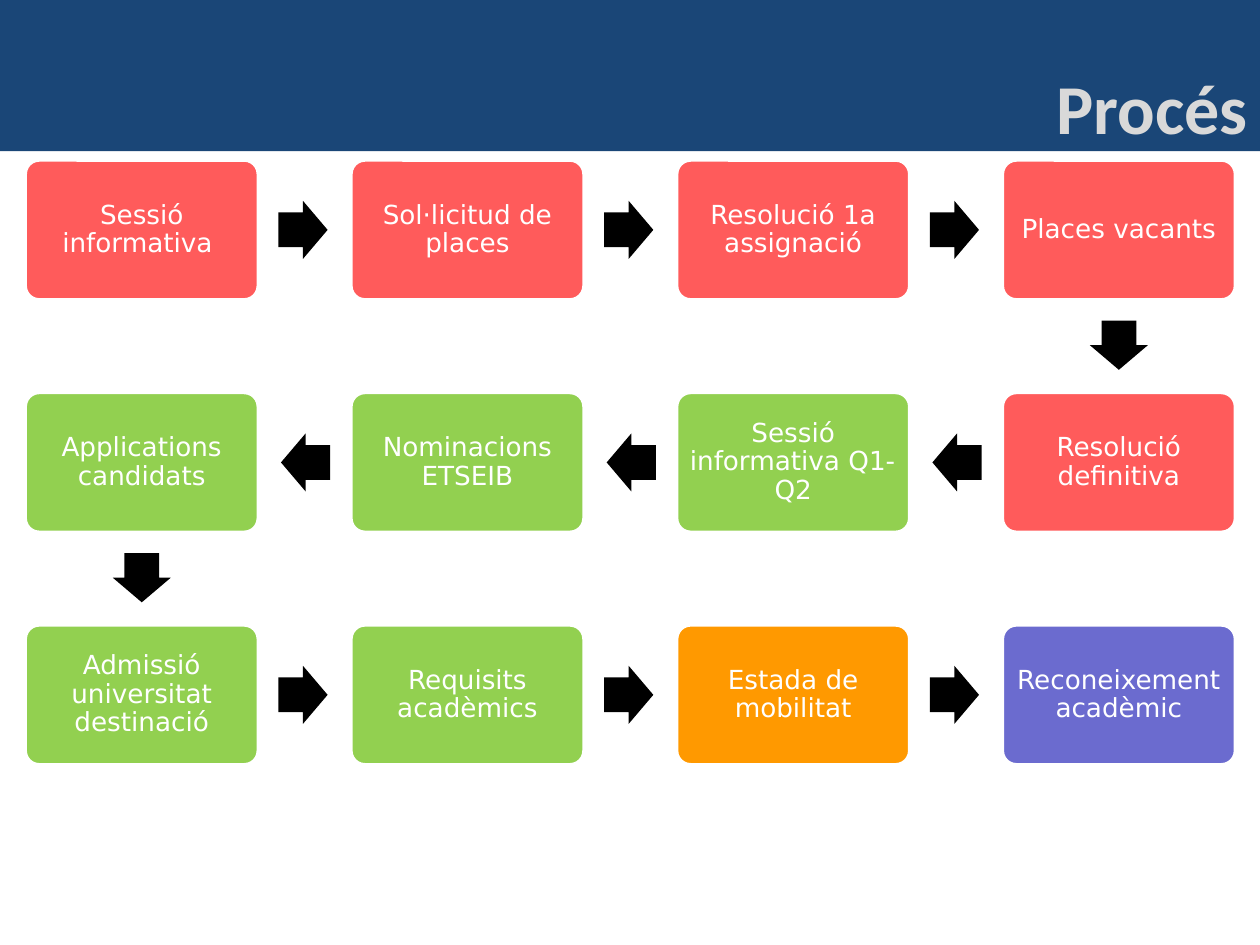
from pptx import Presentation
from pptx.dml.color import RGBColor
from pptx.enum.shapes import MSO_SHAPE as Shape
from pptx.enum.text import MSO_ANCHOR as Anchor, PP_ALIGN as Align
from pptx.util import Inches, Pt

COLORS = {
    "navy": "1A4677", "grey": "D9D9D9", "white": "FFFFFF", "black": "000000",
    "red": "FF5B5B", "green": "92D050", "orange": "FF9900", "violet": "6B6BCF",
}

# Steps in reading order along the winding path
STEPS = [
    ("Sessió informativa ", "red"),
    ("Sol·licitud de places", "red"),
    ("Resolució 1a assignació", "red"),
    ("Places vacants", "red"),
    ("Resolució definitiva", "red"),
    ("Sessió informativa Q1-Q2", "green"),
    ("Nominacions ETSEIB", "green"),
    ("Applications candidats", "green"),
    ("Admissió universitat destinació", "green"),
    ("Requisits acadèmics", "green"),
    ("Estada de mobilitat", "orange"),
    ("Reconeixement acadèmic", "violet"),
]

# Grid of boxes, in inches
COLS = 4
LEFT, TOP = 0.2, 1.27
STEP_X, STEP_Y = 2.585, 1.845
BOX_W, BOX_H = 1.85, 1.11
ARROW_W, ARROW_H = 0.39, 0.46


def rgb(name):
    return RGBColor.from_string(COLORS[name])


def add_block(slide, kind, x, y, w, h, fill):
    block = slide.shapes.add_shape(kind, Inches(x), Inches(y), Inches(w), Inches(h))
    block.shadow.inherit = False
    block.fill.solid()
    block.fill.fore_color.rgb = rgb(fill)
    block.line.fill.background()
    return block


def set_text(frame, text, align, font, size, color, bold=False):
    frame.word_wrap = True
    frame.text = text
    para = frame.paragraphs[0]
    para.alignment = align
    run = para.runs[0].font
    run.name, run.size, run.bold = font, Pt(size), bold
    run.color.rgb = rgb(color)
    return para


def add_title(slide, text):
    box = slide.shapes.add_textbox(Inches(2.95), Inches(0.46), Inches(7.05), Inches(0.77))
    set_text(box.text_frame, text, Align.RIGHT, "Calibri", 40, "grey", True)


def add_step(slide, x, y, text, fill):
    box = add_block(slide, Shape.ROUNDED_RECTANGLE, x, y, BOX_W, BOX_H, fill)
    box.adjustments[0] = 0.1
    box.line.color.rgb = rgb("white")
    box.line.width = Pt(2)
    frame = box.text_frame
    frame.margin_left = frame.margin_right = Inches(0.06)
    frame.margin_top = frame.margin_bottom = Inches(0.06)
    frame.vertical_anchor = Anchor.MIDDLE
    para = set_text(frame, text, Align.CENTER, "DejaVu Sans", 15, "white")
    para.line_spacing = 0.9


def add_arrow(slide, x, y, turn):
    arrow = add_block(slide, Shape.RIGHT_ARROW, x, y, ARROW_W, ARROW_H, "black")
    arrow.adjustments[0], arrow.adjustments[1] = 0.6, 0.5
    arrow.rotation = turn


def place(index):
    """Corner of a step: even rows run right, odd rows run left."""
    row, col = divmod(index, COLS)
    if row % 2:
        col = COLS - 1 - col
    return LEFT + col * STEP_X, TOP + row * STEP_Y


def add_link(slide, index):
    """Arrow from a step to the next one."""
    x, y = place(index)
    next_x, next_y = place(index + 1)
    mid_y = y + (BOX_H - ARROW_H) / 2
    if next_y > y:
        add_arrow(slide, x + (BOX_W - ARROW_W) / 2, y + 1.24, 90)
    elif next_x > x:
        add_arrow(slide, x + 2.01, mid_y, 0)
    else:
        add_arrow(slide, next_x + 2.03, mid_y, 180)


def main():
    deck = Presentation()
    deck.slide_width, deck.slide_height = Inches(10), Inches(7.5)
    slide = deck.slides.add_slide(deck.slide_layouts[6])

    # Header
    add_block(slide, Shape.RECTANGLE, 0, 0, 10, 1.2, "navy")
    add_title(slide, "Procés")

    # Process path
    for index, (text, fill) in enumerate(STEPS):
        add_step(slide, *place(index), text, fill)
        if index + 1 < len(STEPS):
            add_link(slide, index)

    deck.save("out.pptx")


if __name__ == "__main__":
    main()
